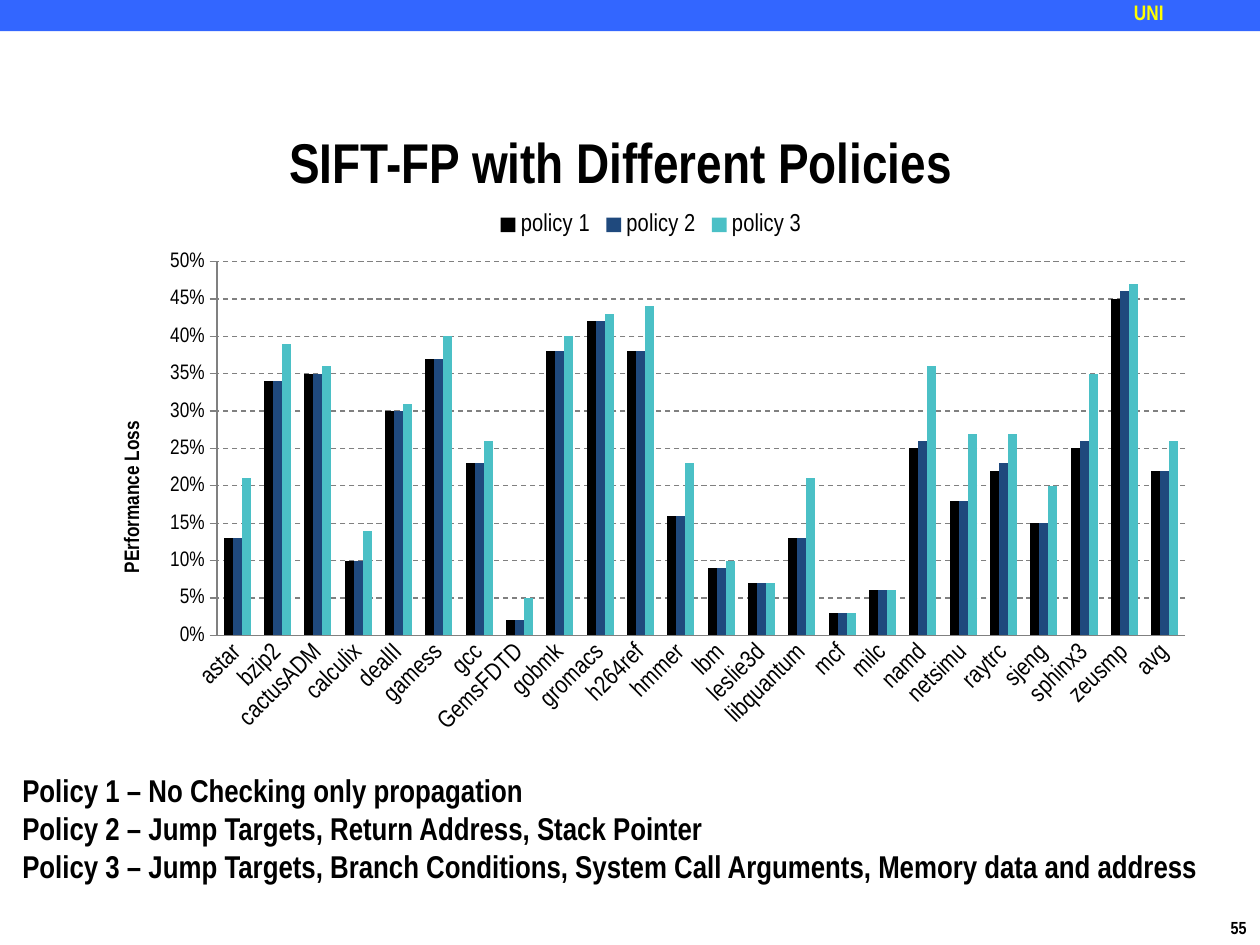
from lxml import etree
from pptx import Presentation
from pptx.chart.data import CategoryChartData
from pptx.dml.color import RGBColor
from pptx.enum.chart import XL_CHART_TYPE, XL_LEGEND_POSITION, XL_TICK_MARK
from pptx.enum.dml import MSO_LINE
from pptx.enum.shapes import MSO_SHAPE
from pptx.enum.text import MSO_ANCHOR, PP_ALIGN
from pptx.oxml.ns import qn
from pptx.util import Cm, Pt

COLUMNS = XL_CHART_TYPE.COLUMN_CLUSTERED
LEGEND_TOP = XL_LEGEND_POSITION.TOP
TICK_NONE, TICK_OUT = XL_TICK_MARK.NONE, XL_TICK_MARK.OUTSIDE
DASH = MSO_LINE.DASH
RECTANGLE = MSO_SHAPE.RECTANGLE
MIDDLE = MSO_ANCHOR.MIDDLE
CENTER = PP_ALIGN.CENTER

FONT = "Arial Narrow"
BLACK, GRAY, BLUE, YELLOW = "000000", "808080", "3366FF", "FFFF00"
TITLE_ONLY = 5

BENCHMARKS = [
    "astar", "bzip2", "cactusADM", "calculix", "dealII", "gamess", "gcc", "GemsFDTD",
    "gobmk", "gromacs", "h264ref", "hmmer", "lbm", "leslie3d", "libquantum", "mcf",
    "milc", "namd", "netsimu", "raytrc", "sjeng", "sphinx3", "zeusmp", "avg",
]
# Name, colour, performance loss in percent for each benchmark
POLICIES = [
    ("policy 1", "000000", [13, 34, 35, 10, 30, 37, 23, 2, 38, 42, 38, 16,
                            9, 7, 13, 3, 6, 25, 18, 22, 15, 25, 45, 22]),
    ("policy 2", "1F497D", [13, 34, 35, 10, 30, 37, 23, 2, 38, 42, 38, 16,
                            9, 7, 13, 3, 6, 26, 18, 23, 15, 26, 46, 22]),
    ("policy 3", "4BC0C6", [21, 39, 36, 14, 31, 40, 26, 5, 40, 43, 44, 23,
                            10, 7, 21, 3, 6, 36, 27, 27, 20, 35, 47, 26]),
]
POLICY_NOTES = [
    "Policy 1 – No Checking only propagation",
    "Policy 2 – Jump Targets, Return Address, Stack Pointer",
    "Policy 3 – Jump Targets, Branch Conditions, System Call Arguments, Memory data and address",
]


def rgb(color):
    return RGBColor.from_string(color)


def style_font(font, size, color=BLACK, bold=False):
    font.name, font.size, font.bold = FONT, Pt(size), bold
    font.color.rgb = rgb(color)


def style_line(line, color):
    line.color.rgb = rgb(color)
    line.width = Pt(0.75)


def add_label(slide, lines, left, top, width, height, size,
              color=BLACK, wrap=True, inset=True):
    label = slide.shapes.add_textbox(left, top, width, height)
    frame = label.text_frame
    frame.word_wrap = wrap
    if not inset:
        frame.margin_left = frame.margin_top = 0
        frame.margin_right = frame.margin_bottom = 0
    frame.text = "\n".join(lines)
    for paragraph in frame.paragraphs:
        style_font(paragraph.runs[0].font, size, color, bold=True)


def add_header(slide, width):
    band = slide.shapes.add_shape(RECTANGLE, 0, 0, width, Cm(0.63))
    band.shadow.inherit = False
    band.fill.solid()
    band.fill.fore_color.rgb = rgb(BLUE)
    band.line.fill.background()
    add_label(slide, ["UNI"], Cm(22.86), 0, Cm(2.54), Cm(0.56), 12, YELLOW, inset=False)


def set_title(slide, text):
    title = slide.shapes.title
    title.left, title.top = Cm(2.54), Cm(2.49)
    title.width, title.height = Cm(19.96), Cm(1.7)
    frame = title.text_frame
    frame.text = text
    frame.vertical_anchor = MIDDLE
    paragraph = frame.paragraphs[0]
    paragraph.alignment = CENTER
    paragraph.line_spacing = 0.9
    style_font(paragraph.runs[0].font, 32, bold=True)


def set_layout(parent, **settings):
    """Place a chart part by fractions of the chart's size."""
    layout = parent.find(qn("c:layout"))
    if layout is None:
        layout = etree.Element(qn("c:layout"))
        parent.insert(0, layout)
    manual = etree.SubElement(layout, qn("c:manualLayout"))
    for tag, value in settings.items():
        etree.SubElement(manual, qn(f"c:{tag}"), val=str(value))


def format_axes(chart):
    benchmark_axis, loss_axis = chart.category_axis, chart.value_axis
    for axis, size, tick in ((benchmark_axis, 14, TICK_NONE), (loss_axis, 12, TICK_OUT)):
        style_font(axis.tick_labels.font, size)
        style_line(axis.format.line, GRAY)
        axis.major_tick_mark, axis.minor_tick_mark = tick, TICK_NONE
    benchmark_axis._element.find(qn("c:txPr")).find(qn("a:bodyPr")).set("rot", "-2700000")

    loss_axis.minimum_scale, loss_axis.maximum_scale = 0, 0.5
    loss_axis.major_unit = 0.05
    loss_axis.tick_labels.number_format = "0%"
    loss_axis.tick_labels.number_format_is_linked = False
    gridline = loss_axis.major_gridlines.format.line
    style_line(gridline, GRAY)
    gridline.dash_style = DASH

    caption = loss_axis.axis_title.text_frame
    caption.text = "PErformance Loss"
    style_font(caption.paragraphs[0].runs[0].font, 12, bold=True)
    set_layout(loss_axis.axis_title._element, xMode="edge", yMode="edge", x=0.02, y=0.4)


def add_loss_chart(slide):
    data = CategoryChartData(number_format="0%")
    data.categories = BENCHMARKS
    for name, _, losses in POLICIES:
        data.add_series(name, [loss / 100 for loss in losses])
    chart = slide.shapes.add_chart(
        COLUMNS, Cm(1.91), Cm(4.01), Cm(22.43), Cm(11), data).chart
    style_font(chart.font, 10)
    chart.has_title = False
    chart.has_legend = True
    chart.legend.position = LEGEND_TOP
    chart.legend.include_in_layout = False
    style_font(chart.legend.font, 14)

    plot = chart.plots[0]
    plot.gap_width, plot.overlap = 150, 0
    plot.vary_by_categories = False
    for series, (_, color, _) in zip(plot.series, POLICIES):
        series.format.fill.solid()
        series.format.fill.fore_color.rgb = rgb(color)
    format_axes(chart)
    set_layout(chart._chartSpace.chart.plotArea, layoutTarget="inner",
               xMode="edge", yMode="edge", x=0.11, y=0.115, w=0.87, h=0.685)


def main():
    presentation = Presentation()
    presentation.slide_width, presentation.slide_height = Cm(25.4), Cm(19.05)
    slide = presentation.slides.add_slide(presentation.slide_layouts[TITLE_ONLY])
    add_label(slide, ["55"], Cm(24.56), Cm(18.36), Cm(0.86), Cm(0.69), 10, wrap=False)
    add_header(slide, presentation.slide_width)
    add_loss_chart(slide)
    add_label(slide, POLICY_NOTES, Cm(0.2), Cm(15.42), Cm(25.2), Cm(2.57), 18)
    set_title(slide, "SIFT-FP with Different Policies")
    presentation.save("out.pptx")


if __name__ == "__main__":
    main()
